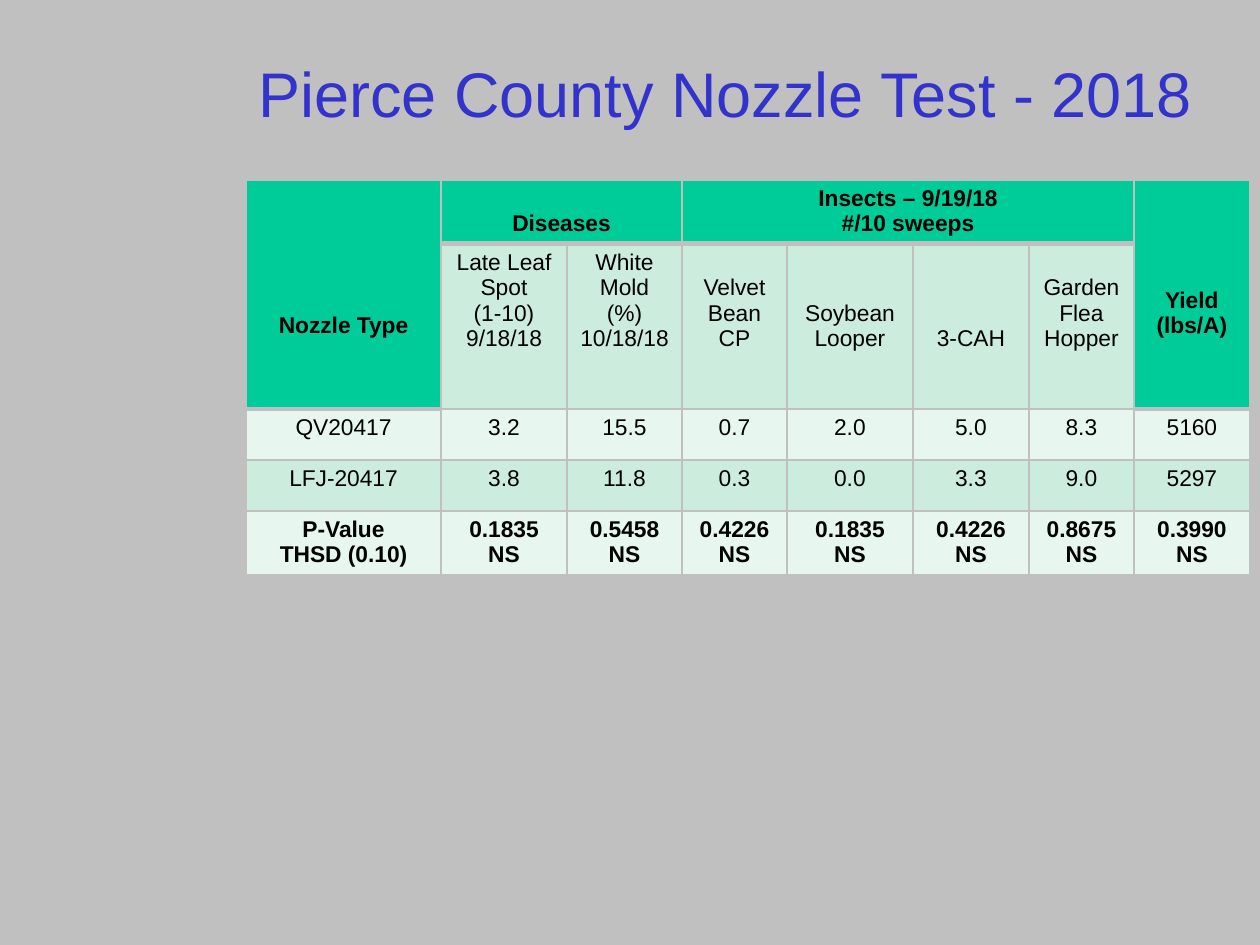
from dataclasses import dataclass

import lxml.etree
import pptx
import pptx.dml.color
import pptx.enum.text
import pptx.oxml.ns
import pptx.util


@dataclass(frozen=True)
class Theme:
    font: str = "Arial"
    title_size: int = 36
    table_size: int = 13
    background: str = "C0C0C0"
    title: str = "3333CC"
    text: str = "000000"
    header: str = "00CC99"
    band_dark: str = "CCECDE"
    band_light: str = "E7F6EF"
    thin: int = 1
    thick: int = 3


@dataclass(frozen=True)
class Entry:
    row: int
    column: int
    text: str
    fill: str
    bold: bool = False
    lines_above: int = 0
    row_span: int = 1
    column_span: int = 1


THEME = Theme()
LEFT, WIDTH = 246, 1004
COLUMNS = (195, 126, 115, 105, 126, 116, 105, 116)
ROWS = (63, 165, 51, 51, 63)
MARGIN_TOP, MARGIN_BOTTOM = 6, 3
LINE_PITCH = 25.4


def emu(px: float) -> int:
    return round(px * 914400 / 126)


def rgb(value: str) -> pptx.dml.color.RGBColor:
    return pptx.dml.color.RGBColor.from_string(value)


def style_font(font, size: int, color: str, bold: bool = False) -> None:
    font.name = THEME.font
    font.size = pptx.util.Pt(size)
    font.bold = bold
    font.color.rgb = rgb(color)


def set_borders(cell, top: int, bottom: int) -> None:
    properties = cell._tc.get_or_add_tcPr()
    widths = {"a:lnL": THEME.thin, "a:lnR": THEME.thin, "a:lnT": top, "a:lnB": bottom}
    for position, (tag, width) in enumerate(widths.items()):
        line = lxml.etree.Element(pptx.oxml.ns.qn(tag), w=str(pptx.util.Pt(width)))
        solid = lxml.etree.SubElement(line, pptx.oxml.ns.qn("a:solidFill"))
        lxml.etree.SubElement(solid, pptx.oxml.ns.qn("a:srgbClr"), val=THEME.background)
        properties.insert(position, line)


def fill_entry(table, entry: Entry) -> None:
    cell = table.cell(entry.row, entry.column)
    last_row = entry.row + entry.row_span - 1
    last_column = entry.column + entry.column_span - 1
    if (last_row, last_column) != (entry.row, entry.column):
        cell.merge(table.cell(last_row, last_column))
    cell.text_frame.text = entry.text
    cell.margin_top = emu(MARGIN_TOP + entry.lines_above * LINE_PITCH)
    cell.margin_bottom = emu(MARGIN_BOTTOM)
    for paragraph in cell.text_frame.paragraphs:
        paragraph.alignment = pptx.enum.text.PP_ALIGN.CENTER
        for run in paragraph.runs:
            style_font(run.font, THEME.table_size, THEME.text, entry.bold)

    # A thick rule closes each header cell
    is_header = entry.fill == THEME.header
    outer_column = entry.column in (0, len(COLUMNS) - 1)
    below_header = entry.row == (2 if outer_column else 1)
    top = THEME.thick if below_header else THEME.thin
    bottom = THEME.thick if is_header else THEME.thin
    for row in range(entry.row, last_row + 1):
        for column in range(entry.column, last_column + 1):
            part = table.cell(row, column)
            part.fill.solid()
            part.fill.fore_color.rgb = rgb(entry.fill)
            set_borders(part, top, bottom)


def add_title(slide, text: str) -> None:
    title = slide.shapes.add_textbox(emu(LEFT), emu(14), emu(WIDTH), emu(157))
    frame = title.text_frame
    frame.word_wrap = True
    frame.vertical_anchor = pptx.enum.text.MSO_ANCHOR.MIDDLE
    frame.text = text
    style_font(frame.paragraphs[0].runs[0].font, THEME.title_size, THEME.title)


def add_results(slide, entries: list[Entry]) -> None:
    frame = slide.shapes.add_table(
        len(ROWS), len(COLUMNS), emu(LEFT), emu(180), emu(WIDTH), emu(sum(ROWS))
    )
    table = frame.table
    table.first_row = False
    table.horz_banding = False
    for column, width in zip(table.columns, COLUMNS):
        column.width = emu(width)
    for row, height in zip(table.rows, ROWS):
        row.height = emu(height)
    for entry in entries:
        fill_entry(table, entry)


# Group headers
HEADERS = [
    Entry(0, 0, "Nozzle Type", THEME.header, True, 5, row_span=2),
    Entry(0, 1, "Diseases", THEME.header, True, 1, column_span=2),
    Entry(0, 3, "Insects – 9/19/18\n#/10 sweeps", THEME.header, True, column_span=4),
    Entry(0, 7, "Yield\n(lbs/A)", THEME.header, True, 4, row_span=2),
]

# Measured traits, set to end on the same line
TRAITS = [
    ("Late Leaf Spot\n(1-10)\n9/18/18", 0),
    ("White\nMold\n(%)\n10/18/18", 0),
    ("Velvet\nBean\nCP", 1),
    ("Soybean\nLooper", 2),
    ("3-CAH", 3),
    ("Garden\nFlea\nHopper", 1),
]

# Trial results
NOZZLES = [
    ("QV20417", "3.2", "15.5", "0.7", "2.0", "5.0", "8.3", "5160"),
    ("LFJ-20417", "3.8", "11.8", "0.3", "0.0", "3.3", "9.0", "5297"),
]
P_VALUES = ("0.1835", "0.5458", "0.4226", "0.1835", "0.4226", "0.8675", "0.3990")


def table_entries() -> list[Entry]:
    entries = list(HEADERS)
    for column, (trait, lines_above) in enumerate(TRAITS, start=1):
        entries.append(Entry(1, column, trait, THEME.band_dark, lines_above=lines_above))
    significance = ("P-Value\nTHSD (0.10)", *(f"{value}\nNS" for value in P_VALUES))
    for row, values in enumerate([*NOZZLES, significance], start=2):
        fill = THEME.band_dark if row % 2 else THEME.band_light
        for column, value in enumerate(values):
            entries.append(Entry(row, column, value, fill, values is significance))
    return entries


def main() -> None:
    deck = pptx.Presentation()
    deck.slide_width = emu(1260)
    deck.slide_height = emu(945)
    slide = deck.slides.add_slide(deck.slide_layouts[6])
    slide.background.fill.solid()
    slide.background.fill.fore_color.rgb = rgb(THEME.background)
    add_title(slide, "Pierce County Nozzle Test - 2018")
    add_results(slide, table_entries())
    deck.save("out.pptx")


if __name__ == "__main__":
    main()
